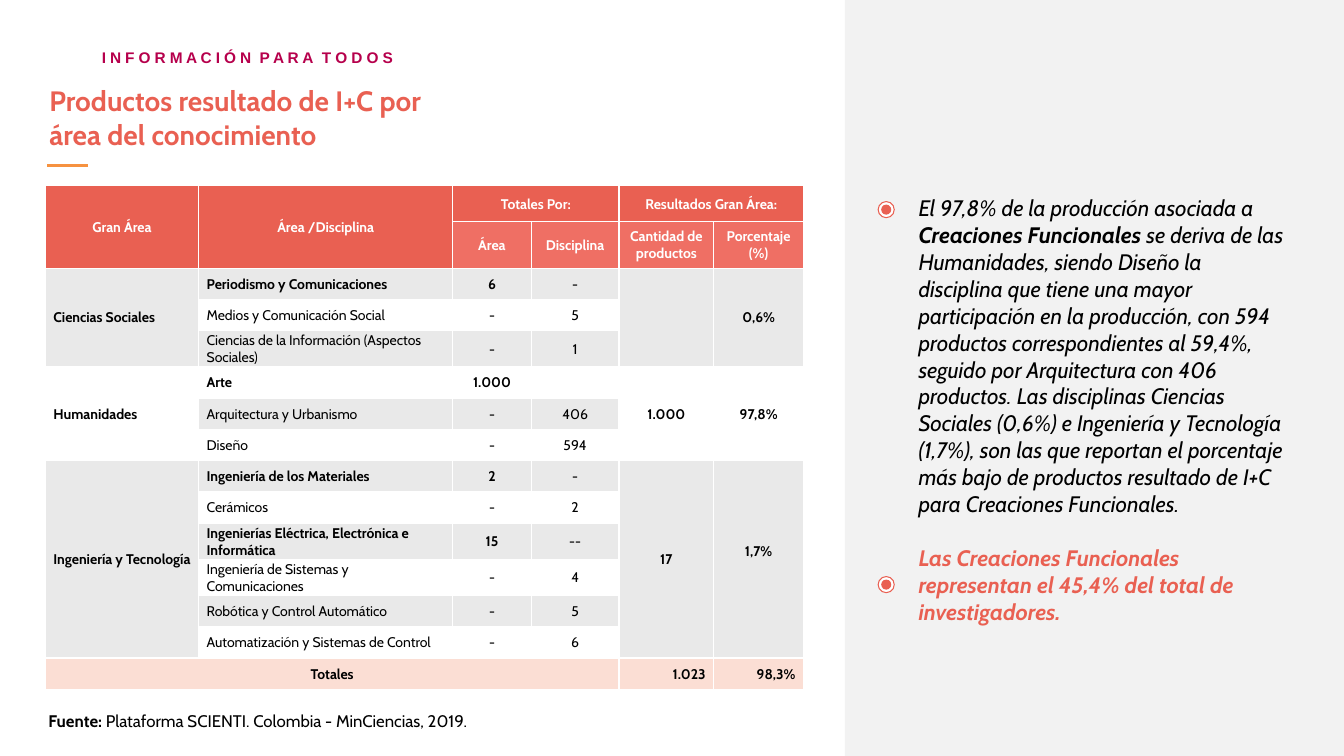
from lxml import etree
from pptx import Presentation
from pptx import util as u
from pptx.dml.color import RGBColor
from pptx.enum import shapes, text
from pptx.oxml.ns import qn

PX = 9144  # 100 px to the inch
CORAL, LIGHT_CORAL, PEACH, GRAY = "E96052", "EF6F64", "FBDED4", "E9E9E9"
BLACK, WHITE = "000000", "FFFFFF"
LEFT, CENTER, RIGHT = text.PP_ALIGN.LEFT, text.PP_ALIGN.CENTER, text.PP_ALIGN.RIGHT

COLUMNS = [152, 252, 78, 87, 94, 89]
ROWS = [36, 46, 31, 31, 36, 31, 31, 31, 31, 31, 36, 36, 31, 31, 31]
# Gran área, productos, porcentaje, [(disciplina, total por área, total por disciplina)]
GROUPS = [
    ("Ciencias Sociales", "", "0,6%", [
        ("Periodismo y Comunicaciones", "6", "-"),
        ("Medios y Comunicación Social", "-", "5"),
        ("Ciencias de la Información (Aspectos Sociales)", "-", "1")]),
    ("Humanidades", "1.000", "97,8%", [
        ("Arte", "1.000", ""),
        ("Arquitectura y Urbanismo", "-", "406"),
        ("Diseño", "-", "594")]),
    ("Ingeniería y Tecnología", "17", "1,7%", [
        ("Ingeniería de los Materiales", "2", "-"),
        ("Cerámicos", "-", "2"),
        ("Ingenierías Eléctrica, Electrónica e Informática", "15", "--"),
        ("Ingeniería de Sistemas y Comunicaciones", "-", "4"),
        ("Robótica y Control Automático", "-", "5"),
        ("Automatización y Sistemas de Control", "-", "6")]),
]


def px(n):
    return u.Emu(n * PX)


def rgb(color):
    return RGBColor.from_string(color)


def add_run(p, words, size, color=BLACK, bold=False, italic=False, font="Cabin", spacing=0):
    """Spacing is in hundredths of a point."""
    r = p.add_run()
    r.text = words
    f = r.font
    f.name, f.size, f.bold, f.italic = font, u.Pt(size), bold, italic
    f.color.rgb = rgb(color)
    if spacing:
        r._r.get_or_add_rPr().set("spc", str(spacing))


def add_text(slide, x, y, w, h, inset=(0, 0)):
    tf = slide.shapes.add_textbox(px(x), px(y), px(w), px(h)).text_frame
    tf.word_wrap = True
    tf.margin_left = tf.margin_right = px(inset[0])
    tf.margin_top = tf.margin_bottom = px(inset[1])
    return tf


def add_shape(parent, kind, x, y, w, h, fill, line=None):
    sp = parent.shapes.add_shape(kind, px(x), px(y), px(w), px(h))
    sp.shadow.inherit = False
    sp.fill.solid()
    sp.fill.fore_color.rgb = rgb(fill)
    if line:
        sp.line.color.rgb = rgb(line)
        sp.line.width = u.Pt(0.75)
    else:
        sp.line.fill.background()


def add_heading(slide, x, y):
    p = add_text(slide, x + 52, y, 410, 25, (2, 2)).paragraphs[0]
    p.line_spacing = 1.3
    for i, word in enumerate(["I N F O R M A C I Ó N", "P A R A", "T O D O S"]):
        if i:
            add_run(p, " ", 11, "B6004C", True, font="Arial", spacing=300)
        add_run(p, word, 11, "B6004C", True, font="Arial", spacing=-10)
    tf = add_text(slide, x, y + 43, 1067, 67, (2, 0))
    for i, line in enumerate(["Productos resultado de I+C por", "área del conocimiento"]):
        p = tf.add_paragraph() if i else tf.paragraphs[0]
        add_run(p, line, 20, CORAL, True)
    rule = slide.shapes.add_connector(
        shapes.MSO_CONNECTOR.STRAIGHT, px(x), px(y + 124), px(x + 40), px(y + 124))
    rule.line.color.rgb = rgb("F69240")
    rule.line.width = u.Pt(2.25)
    etree.SubElement(rule._element.spPr, qn("a:effectLst"))


def add_borders(cell):
    tcPr = cell._tc.get_or_add_tcPr()
    for side in ("a:lnL", "a:lnR", "a:lnT", "a:lnB"):
        ln = etree.SubElement(tcPr, qn(side), w="12700")
        fill = etree.SubElement(ln, qn("a:solidFill"))
        etree.SubElement(fill, qn("a:srgbClr"), val=WHITE)


def fill_cell(cell, words, fill, color=BLACK, bold=True, align=CENTER):
    cell.fill.solid()
    cell.fill.fore_color.rgb = rgb(fill)
    tf = cell.text_frame
    for i, line in enumerate(words.split("\n") if words else []):
        p = tf.add_paragraph() if i else tf.paragraphs[0]
        p.alignment = align
        add_run(p, line, 10, color, bold)


def add_products_table(slide, x, y):
    t = slide.shapes.add_table(
        len(ROWS), len(COLUMNS), px(x), px(y), px(sum(COLUMNS)), px(sum(ROWS))).table
    t.first_row = t.horz_banding = False
    for column, w in zip(t.columns, COLUMNS):
        column.width = px(w)
    for row, h in zip(t.rows, ROWS):
        row.height = px(h)
    for cell in t.iter_cells():
        cell.vertical_anchor = text.MSO_ANCHOR.MIDDLE
        cell.margin_left = cell.margin_right = px(8)
        cell.margin_top, cell.margin_bottom = px(1), 0
        cell.text_frame.paragraphs[0]._p.get_or_add_endParaRPr().set("sz", "1000")
        add_borders(cell)

    def put(r, c, words, fill, rows=1, cols=1, **style):
        if rows > 1 or cols > 1:
            t.cell(r, c).merge(t.cell(r + rows - 1, c + cols - 1))
        fill_cell(t.cell(r, c), words, fill, **style)

    put(0, 0, "Gran Área", CORAL, rows=2, color=WHITE)
    put(0, 1, "Área /Disciplina", CORAL, rows=2, color=WHITE)
    put(0, 2, "Totales Por:", CORAL, cols=2, color=WHITE)
    put(0, 4, "Resultados Gran Área:", CORAL, cols=2, color=WHITE)
    for c, label in enumerate(["Área", "Disciplina", "Cantidad de productos", "Porcentaje\n(%)"], 2):
        put(1, c, label, LIGHT_CORAL, color=WHITE)

    r = 2
    for name, quantity, percent, lines in GROUPS:
        shade = WHITE if r % 2 else GRAY
        put(r, 0, name, shade, rows=len(lines), align=LEFT)
        put(r, 4, quantity, shade, rows=len(lines))
        put(r, 5, percent, shade, rows=len(lines))
        if name == "Ingeniería y Tecnología":
            t.cell(r, 5).margin_bottom = px(17)
        for label, by_area, by_discipline in lines:
            shade, is_area = WHITE if r % 2 else GRAY, by_area != "-"
            put(r, 1, label, shade, bold=is_area, align=LEFT)
            put(r, 2, by_area, shade, bold=is_area)
            put(r, 3, by_discipline, shade, bold=False)
            r += 1
    put(r, 0, "Totales", PEACH, cols=4)
    put(r, 4, "1.023", PEACH, align=RIGHT)
    put(r, 5, "98,3%", PEACH, align=RIGHT)


def add_source(slide, x, y):
    p = add_text(slide, x, y, 658, 34, (13, 7)).paragraphs[0]
    add_run(p, "Fuente: ", 12, bold=True)
    add_run(p, "Plataforma SCIENTI. Colombia - MinCiencias, 2019.", 12)


def add_findings(slide, x, y, w, h):
    add_shape(slide, shapes.MSO_SHAPE.RECTANGLE, x, y, w, h, "F2F2F2")
    tf = add_text(slide, x + 60, y + 186, 391, 471, (13, 7))
    p = tf.paragraphs[0]
    add_run(p, "El 97,8% de la producción asociada a ", 16, italic=True)
    add_run(p, "Creaciones Funcionales", 16, bold=True, italic=True)
    add_run(p, " se deriva de las Humanidades, siendo Diseño la disciplina que tiene una mayor "
            "participación en la producción, con 594 productos correspondientes al 59,4%, seguido "
            "por Arquitectura con 406 productos. Las disciplinas Ciencias Sociales (0,6%) e "
            "Ingeniería y Tecnología (1,7%), son las que reportan el porcentaje más bajo de "
            "productos resultado de I+C para Creaciones Funcionales.", 16, italic=True)
    p = tf.add_paragraph()
    p.space_before = u.Pt(19.4)
    add_run(p, "Las Creaciones Funcionales representan el 45,4% del total de investigadores.",
            16, CORAL, True, True)
    for top in (200, 572):
        marker = slide.shapes.add_group_shape()
        add_shape(marker, shapes.MSO_SHAPE.OVAL, x + 33, y + top, 16, 16, WHITE, CORAL)
        add_shape(marker, shapes.MSO_SHAPE.OVAL, x + 36, y + top + 3, 10, 10, CORAL)


def main():
    prs = Presentation()
    prs.slide_width, prs.slide_height = px(1333), px(750)
    slide = prs.slides.add_slide(prs.slide_layouts[6])
    add_findings(slide, 838, 0, 495, 750)
    add_heading(slide, 47, 40)
    add_products_table(slide, 45, 184)
    add_source(slide, 35, 698)
    prs.save("out.pptx")


if __name__ == "__main__":
    main()
